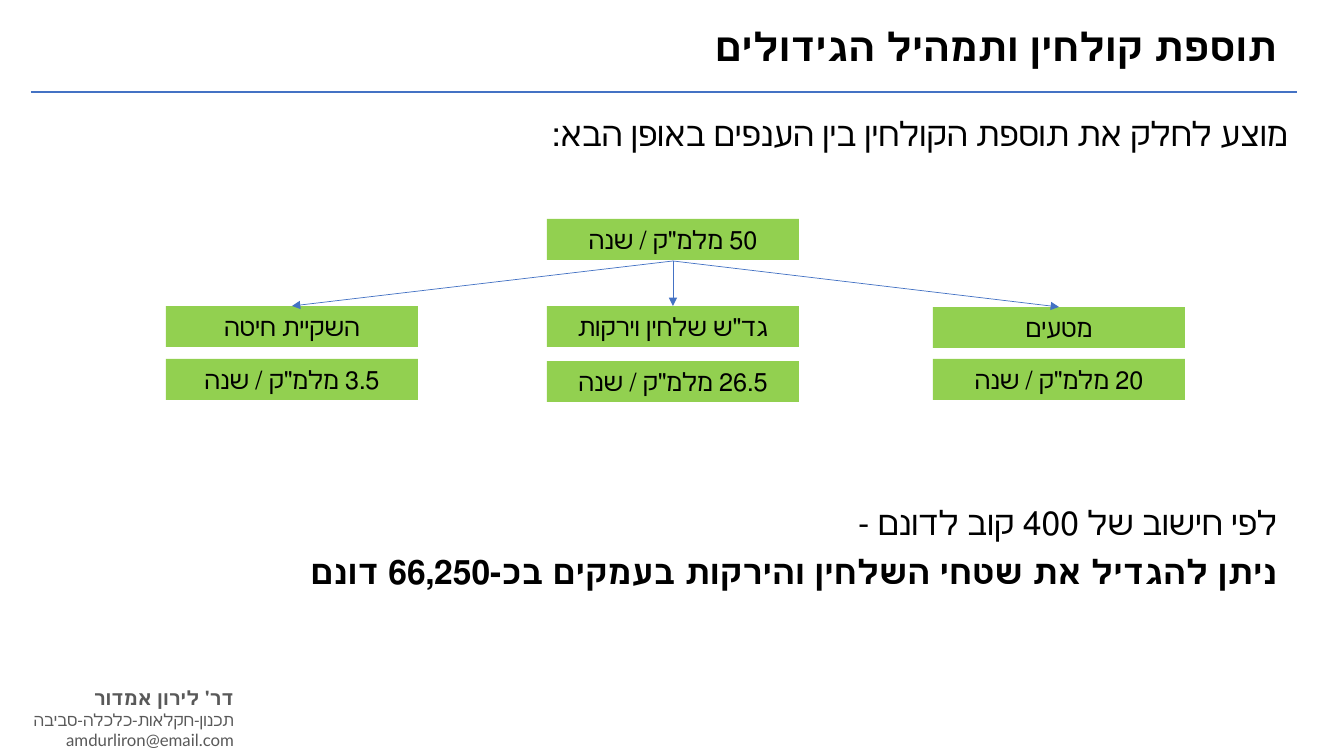
from lxml import etree
from pptx import Presentation
from pptx.dml.color import RGBColor
from pptx.enum.shapes import MSO_CONNECTOR, MSO_SHAPE
from pptx.enum.text import MSO_ANCHOR, MSO_AUTO_SIZE, PP_ALIGN
from pptx.oxml.ns import qn
from pptx.util import Emu, Pt

STRAIGHT = MSO_CONNECTOR.STRAIGHT
RECTANGLE = MSO_SHAPE.RECTANGLE
RIGHT, CENTER = PP_ALIGN.RIGHT, PP_ALIGN.CENTER
TOP, MIDDLE = MSO_ANCHOR.TOP, MSO_ANCHOR.MIDDLE
GROW = MSO_AUTO_SIZE.SHAPE_TO_FIT_TEXT

BLACK, GRAY, GREEN, BLUE = "000000", "595959", "92D050", "4472C4"
BODY_FONT, CREDIT_FONT = "Calibri", "Lato"

TITLE = ("תוספת קולחין ותמהיל הגידולים", 28, True)
INTRO = ("מוצע לחלק את תוספת הקולחין בין הענפים באופן הבא:", 24, False)
CONCLUSION = [
    ("לפי חישוב של 400 קוב לדונם -", 24, False),
    ("ניתן להגדיל את שטחי השלחין והירקות בעמקים בכ-66,250 דונם", 24, True),
]
CREDIT = [
    ("דר' לירון אמדור", 14, True),
    ("תכנון-חקלאות-כלכלה-סביבה", 12, False),
    ("amdurliron@email.com", 12, False),
]
TOTAL = '50 מלמ"ק / שנה'
BRANCHES = [
    ("מטעים", '20 מלמ"ק / שנה', 933, 307, 359),
    ('גד"ש שלחין וירקות', '26.5 מלמ"ק / שנה', 547, 306, 361),
    ("השקיית חיטה", '3.5 מלמ"ק / שנה', 166, 306, 359),
]
BOX_WIDTH, BOX_HEIGHT = 252, 41
TOTAL_LEFT, TOTAL_TOP = 547, 219
ARROW_TOP = 261


def px(value):
    return Emu(round(value * 914400 / 100.8))


def color(value):
    return RGBColor.from_string(value)


def write(shape, lines, align=RIGHT, font=BODY_FONT, ink=BLACK, gap=0, anchor=TOP):
    frame = shape.text_frame
    frame.word_wrap = True
    frame.auto_size = GROW
    frame.vertical_anchor = anchor
    for index, (text, size, bold) in enumerate(lines):
        para = frame.add_paragraph() if index else frame.paragraphs[0]
        para.text = text
        para.alignment = align
        para._p.get_or_add_pPr().set("rtl", "1")
        para.space_before = Pt(gap if index else 0)
        para.font.name = font
        para.font.size = Pt(size)
        para.font.bold = bold
        para.font.color.rgb = color(ink)


def add_text(left, top, width, height, lines, **style):
    box = slide.shapes.add_textbox(px(left), px(top), px(width), px(height))
    write(box, lines, **style)


def add_box(left, top, text):
    box = slide.shapes.add_shape(RECTANGLE, px(left), px(top), px(BOX_WIDTH), px(BOX_HEIGHT))
    box.shadow.inherit = False
    box.fill.solid()
    box.fill.fore_color.rgb = color(GREEN)
    box.line.fill.background()
    write(box, [(text, 18, False)], align=CENTER, anchor=MIDDLE)


def add_line(start_x, start_y, end_x, end_y, weight, arrow=False):
    line = slide.shapes.add_connector(STRAIGHT, px(start_x), px(start_y), px(end_x), px(end_y))
    line.line.color.rgb = color(BLUE)
    line.line.width = Pt(weight)
    properties = line._element.spPr
    if arrow:
        etree.SubElement(properties.find(qn("a:ln")), qn("a:tailEnd"), type="triangle")
    etree.SubElement(properties, qn("a:effectLst"))


deck = Presentation()
deck.slide_width, deck.slide_height = px(1344), px(756)
slide = deck.slides.add_slide(deck.slide_layouts[5])

title = slide.shapes.title
title.left, title.top, title.width, title.height = px(103), px(17), px(1184), px(57)
write(title, [TITLE])

add_text(13, 681, 231, 75, CREDIT, font=CREDIT_FONT, ink=GRAY)
add_line(31, 92, 1297, 92, 1.5)
add_text(68, 108, 1230, 50, [INTRO])

add_box(TOTAL_LEFT, TOTAL_TOP, TOTAL)
for name, amount, left, name_top, amount_top in BRANCHES:
    add_box(left, name_top, name)
    add_box(left, amount_top, amount)
    add_line(TOTAL_LEFT + BOX_WIDTH // 2, ARROW_TOP, left + BOX_WIDTH // 2, name_top, 0.5, arrow=True)

add_text(116, 497, 1171, 100, CONCLUSION, gap=6)

deck.save("out.pptx")
